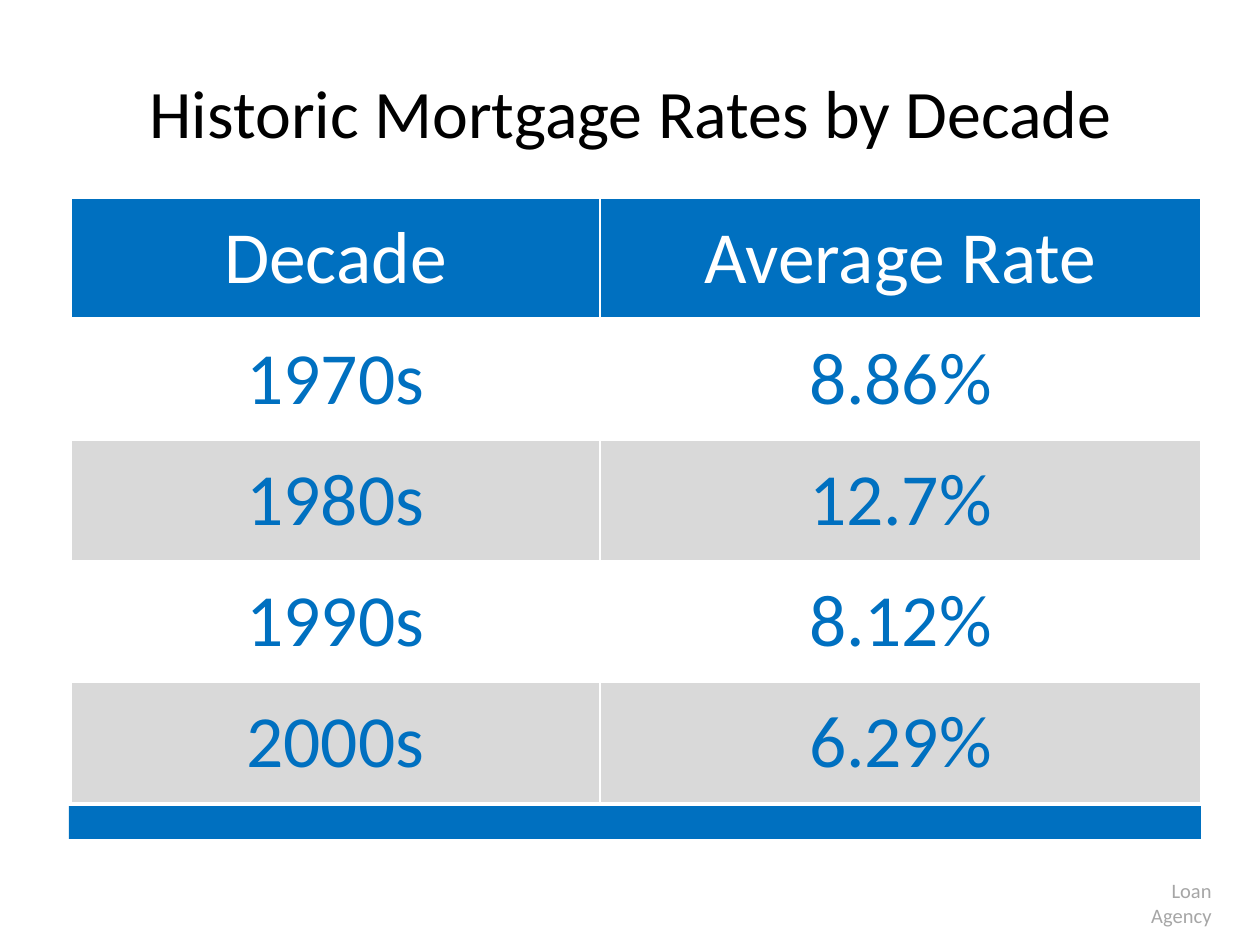
from dataclasses import dataclass
from typing import Any

from lxml.etree import SubElement
from pptx import Presentation
from pptx.dml.color import RGBColor
from pptx.enum.shapes import MSO_SHAPE
from pptx.enum.text import MSO_ANCHOR, MSO_AUTO_SIZE, PP_ALIGN
from pptx.oxml.ns import qn
from pptx.util import Emu, Pt

EMU_PER_PX = 914400 / 126


@dataclass(frozen=True)
class Theme:
    font: str = "Calibri"
    blue: str = "0070C0"
    band: str = "D9D9D9"
    white: str = "FFFFFF"
    black: str = "000000"
    grey: str = "A6A6A6"
    title_size: float = 38.8
    table_size: float = 42
    source_size: float = 11.7
    rule: float = 1
    header_rule: float = 3


@dataclass(frozen=True)
class Area:
    left: int
    top: int
    width: int
    height: int

    def lengths(self) -> tuple[Emu, ...]:
        return tuple(px(n) for n in (self.left, self.top, self.width, self.height))


@dataclass(frozen=True)
class RateRow:
    decade: str
    rate: str
    fill: str | None = None
    color: str = Theme.blue
    bottom_rule: float = Theme.rule


THEME = Theme()
SLIDE = Area(0, 0, 1260, 945)
TITLE = Area(19, 64, 1223, 95)
TABLE = Area(71, 198, 1130, 605)
BAR = Area(69, 806, 1132, 33)
SOURCE = Area(1094, 872, 130, 38)
COLUMNS = (529, 601)
ROWS = (
    RateRow("Decade", "Average Rate", THEME.blue, THEME.white, THEME.header_rule),
    RateRow("1970s", "8.86%"),
    RateRow("1980s", "12.7%", THEME.band),
    RateRow("1990s", "8.12%"),
    RateRow("2000s", "6.29%", THEME.band),
)


def px(length: int) -> Emu:
    return Emu(round(length * EMU_PER_PX))


def apply(target: Any, values: dict[str, Any]) -> None:
    for name, value in values.items():
        setattr(target, name, value)


def write(frame: Any, text: str, size: float, color: str, align: PP_ALIGN) -> None:
    para = frame.paragraphs[0]
    para.alignment = align
    span = para.add_run()
    span.text = text
    apply(span.font, {"name": THEME.font, "size": Pt(size), "bold": False})
    span.font.color.rgb = RGBColor.from_string(color)


def place(box: Any, area: Area) -> None:
    apply(box, dict(zip(("left", "top", "width", "height"), area.lengths())))


def draw_title(page: Any, text: str) -> None:
    box = page.shapes.title
    place(box, TITLE)
    apply(box.text_frame, {
        "word_wrap": True,
        "auto_size": MSO_AUTO_SIZE.SHAPE_TO_FIT_TEXT,
        "vertical_anchor": MSO_ANCHOR.TOP,
    })
    write(box.text_frame, text, THEME.title_size, THEME.black, PP_ALIGN.CENTER)


def draw_borders(cell: Any, bottom: float) -> None:
    properties = cell._tc.get_or_add_tcPr()
    widths = {"L": THEME.rule, "R": THEME.rule, "T": THEME.rule, "B": bottom}
    for side, width in widths.items():
        line = SubElement(properties, qn(f"a:ln{side}"), w=str(Pt(width)))
        SubElement(SubElement(line, qn("a:solidFill")), qn("a:srgbClr"), val=THEME.white)


def draw_cell(cell: Any, text: str, row: RateRow) -> None:
    draw_borders(cell, row.bottom_rule)
    cell.vertical_anchor = MSO_ANCHOR.MIDDLE
    if row.fill:
        cell.fill.solid()
        cell.fill.fore_color.rgb = RGBColor.from_string(row.fill)
    else:
        cell.fill.background()
    write(cell.text_frame, text, THEME.table_size, row.color, PP_ALIGN.CENTER)


def draw_table(page: Any) -> None:
    table = page.shapes.add_table(len(ROWS), len(COLUMNS), *TABLE.lengths()).table
    table.horz_banding = False
    for column, width in zip(table.columns, COLUMNS):
        column.width = px(width)
    for table_row, row in zip(table.rows, ROWS):
        table_row.height = px(TABLE.height // len(ROWS))
        for cell, text in zip(table_row.cells, (row.decade, row.rate)):
            draw_cell(cell, text, row)


def draw_source(page: Any, text: str) -> None:
    box = page.shapes.add_textbox(*SOURCE.lengths())
    apply(box.text_frame, {"word_wrap": False, "auto_size": MSO_AUTO_SIZE.SHAPE_TO_FIT_TEXT})
    write(box.text_frame, text, THEME.source_size, THEME.grey, PP_ALIGN.RIGHT)


def draw_bar(page: Any) -> None:
    bar = page.shapes.add_shape(MSO_SHAPE.RECTANGLE, *BAR.lengths())
    bar.shadow.inherit = False
    bar.fill.solid()
    bar.fill.fore_color.rgb = RGBColor.from_string(THEME.blue)
    bar.line.fill.background()


def main() -> None:
    deck = Presentation()
    apply(deck, {"slide_width": px(SLIDE.width), "slide_height": px(SLIDE.height)})
    page = deck.slides.add_slide(deck.slide_layouts[5])
    draw_table(page)
    draw_source(page, "Loan Agency")
    draw_title(page, "Historic Mortgage Rates by Decade")
    draw_bar(page)
    deck.save("out.pptx")


if __name__ == "__main__":
    main()
